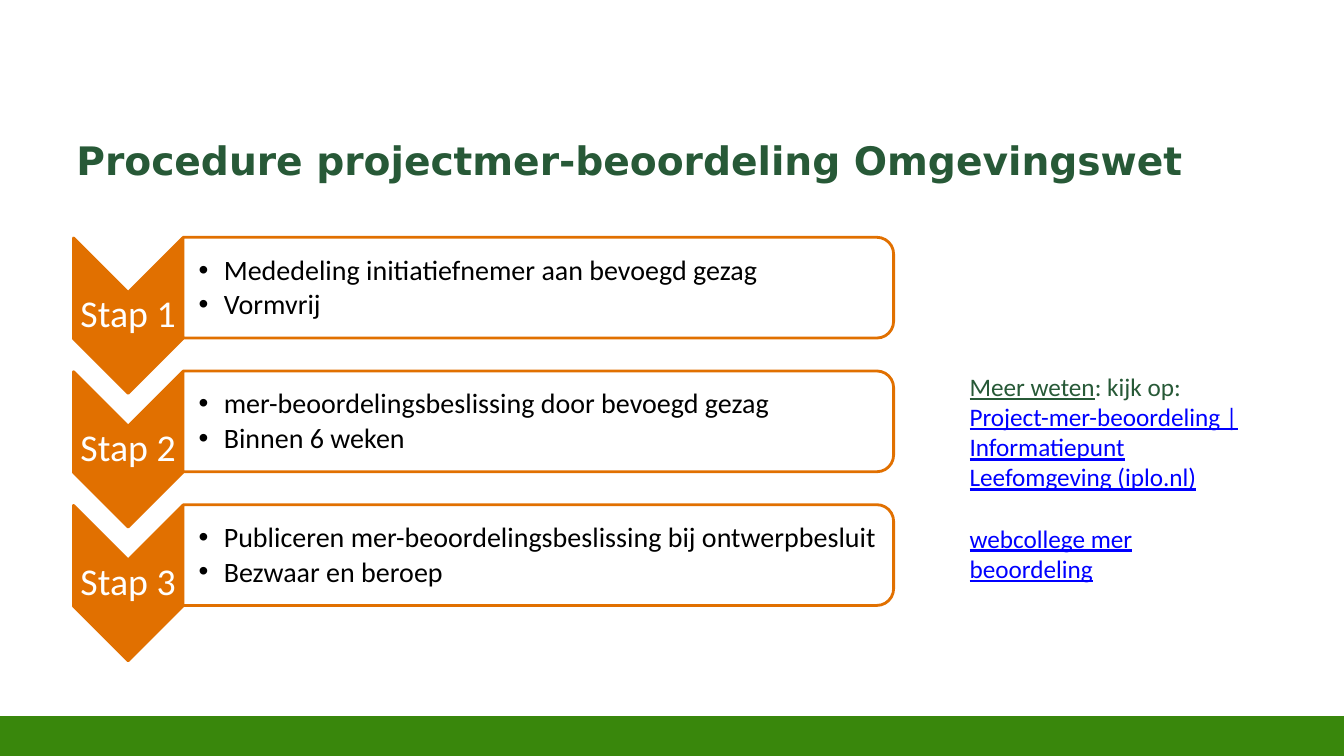
from dataclasses import dataclass

from lxml import etree
from pptx import Presentation
from pptx import util as u
from pptx.dml.color import RGBColor
from pptx.enum import shapes, text
from pptx.oxml import ns


@dataclass(frozen=True)
class Theme:
    """Colours, fonts and type sizes of the slide."""
    footer: str = "39870C"
    heading: str = "275937"
    accent: str = "E17000"
    link: str = "0000FF"
    white: str = "FFFFFF"
    black: str = "000000"
    title_font: str = "DejaVu Sans"
    body_font: str = "Calibri"
    title_size: int = 28
    step_size: int = 27
    bullet_size: int = 20
    side_size: int = 18


THEME = Theme()
STEP_PITCH = 95.5
STEPS = (
    ("Stap 1", ("Mededeling initiatiefnemer aan bevoegd gezag", "Vormvrij")),
    ("Stap 2", ("mer-beoordelingsbeslissing door bevoegd gezag", "Binnen 6 weken")),
    ("Stap 3", ("Publiceren mer-beoordelingsbeslissing bij ontwerpbesluit", "Bezwaar en beroep")),
)


def add_block(slide, kind, box, fill, line, rotation=0):
    """Add a filled preset shape with a 2 pt outline and no shadow."""
    shape = slide.shapes.add_shape(kind, *map(u.Pt, box))
    shape.shadow.inherit = False
    shape.rotation = rotation
    shape.fill.solid()
    shape.fill.fore_color.rgb = RGBColor.from_string(fill)
    shape.line.color.rgb = RGBColor.from_string(line)
    shape.line.width = u.Pt(2)
    return shape


def set_opacity(shape, percent):
    """Set the opacity of a shape's solid fill."""
    color = shape.fill._xPr.find(ns.qn("a:solidFill"))[0]
    etree.SubElement(color, ns.qn("a:alpha"), val=str(percent * 1000))


def add_text_frame(slide, box, insets=(7.2, 3.6, 7.2, 3.6), anchor=text.MSO_ANCHOR.TOP):
    """Add a wrapping text box and return its frame."""
    frame = slide.shapes.add_textbox(*map(u.Pt, box)).text_frame
    frame.word_wrap = True
    frame.vertical_anchor = anchor
    frame.margin_left, frame.margin_top, frame.margin_right, frame.margin_bottom = map(u.Pt, insets)
    return frame


def add_run(paragraph, words, size, color, font=THEME.body_font, bold=False, underline=False):
    """Append one formatted run to a paragraph."""
    run = paragraph.add_run()
    run.text = words
    run.font.name = font
    run.font.size = u.Pt(size)
    run.font.bold = bold
    run.font.underline = underline
    run.font.color.rgb = RGBColor.from_string(color)


def add_bullet(paragraph):
    """Give a paragraph a round bullet with an 18 pt hanging indent."""
    properties = paragraph._p.get_or_add_pPr()
    properties.set("marL", str(u.Pt(18)))
    properties.set("indent", str(-u.Pt(18)))
    etree.SubElement(properties, ns.qn("a:buFont"), typeface="Arial")
    etree.SubElement(properties, ns.qn("a:buChar"), char="•")


def add_step(slide, top, label, bullets):
    """Add a downward chevron with its label and its bulleted bar."""
    add_block(slide, shapes.MSO_SHAPE.CHEVRON, (36, top + 17, 111, 78),
              THEME.accent, THEME.accent, 90)
    frame = add_text_frame(slide, (52.5, top + 39.5, 78, 33), (1.4,) * 4, text.MSO_ANCHOR.MIDDLE)
    paragraph = frame.paragraphs[0]
    paragraph.alignment = text.PP_ALIGN.CENTER
    paragraph.line_spacing = 0.9
    add_run(paragraph, label, THEME.step_size, THEME.white)

    bar = add_block(slide, shapes.MSO_SHAPE.ROUND_2_SAME_RECTANGLE,
                    (348.5, top - 217.8, 72, 507.6), THEME.white, THEME.accent, 90)
    set_opacity(bar, 90)
    frame = add_text_frame(slide, (130.5, top + 4, 504, 65), (11.4, 0.9, 0.9, 0.9),
                           text.MSO_ANCHOR.MIDDLE)
    for index, words in enumerate(bullets):
        paragraph = frame.add_paragraph() if index else frame.paragraphs[0]
        paragraph.line_spacing = 0.9
        paragraph.space_after = u.Pt(3)
        add_bullet(paragraph)
        add_run(paragraph, words, THEME.bullet_size, THEME.black)


def add_title(slide, words):
    """Add the slide heading."""
    frame = add_text_frame(slide, (47.5, 94, 864, 52))
    add_run(frame.paragraphs[0], words, THEME.title_size, THEME.heading, THEME.title_font, bold=True)


def add_side_note(slide):
    """Add the reading suggestions beside the steps."""
    frame = add_text_frame(slide, (685.5, 261.5, 216.5, 181.5))
    intro = frame.paragraphs[0]
    add_run(intro, "Meer weten", THEME.side_size, THEME.heading, underline=True)
    add_run(intro, ": kijk op:", THEME.side_size, THEME.heading)
    sources = (("Project-mer-beoordeling | Informatiepunt Leefomgeving (iplo.nl)", 0),
               ("webcollege mer beoordeling", 22))
    for words, gap in sources:
        paragraph = frame.add_paragraph()
        paragraph.space_before = u.Pt(gap)
        add_run(paragraph, words, THEME.side_size, THEME.link, underline=True)


def main():
    """Build and save the slide."""
    presentation = Presentation()
    presentation.slide_width, presentation.slide_height = u.Pt(960), u.Pt(540)
    slide = presentation.slides.add_slide(presentation.slide_layouts[6])
    add_block(slide, shapes.MSO_SHAPE.RECTANGLE, (0, 512.5, 960, 28), THEME.footer, THEME.footer)
    add_title(slide, "Procedure projectmer-beoordeling Omgevingswet")
    for index, (label, bullets) in enumerate(STEPS):
        add_step(slide, 169.5 + index * STEP_PITCH, label, bullets)
    add_side_note(slide)
    presentation.save("out.pptx")


if __name__ == "__main__":
    main()
